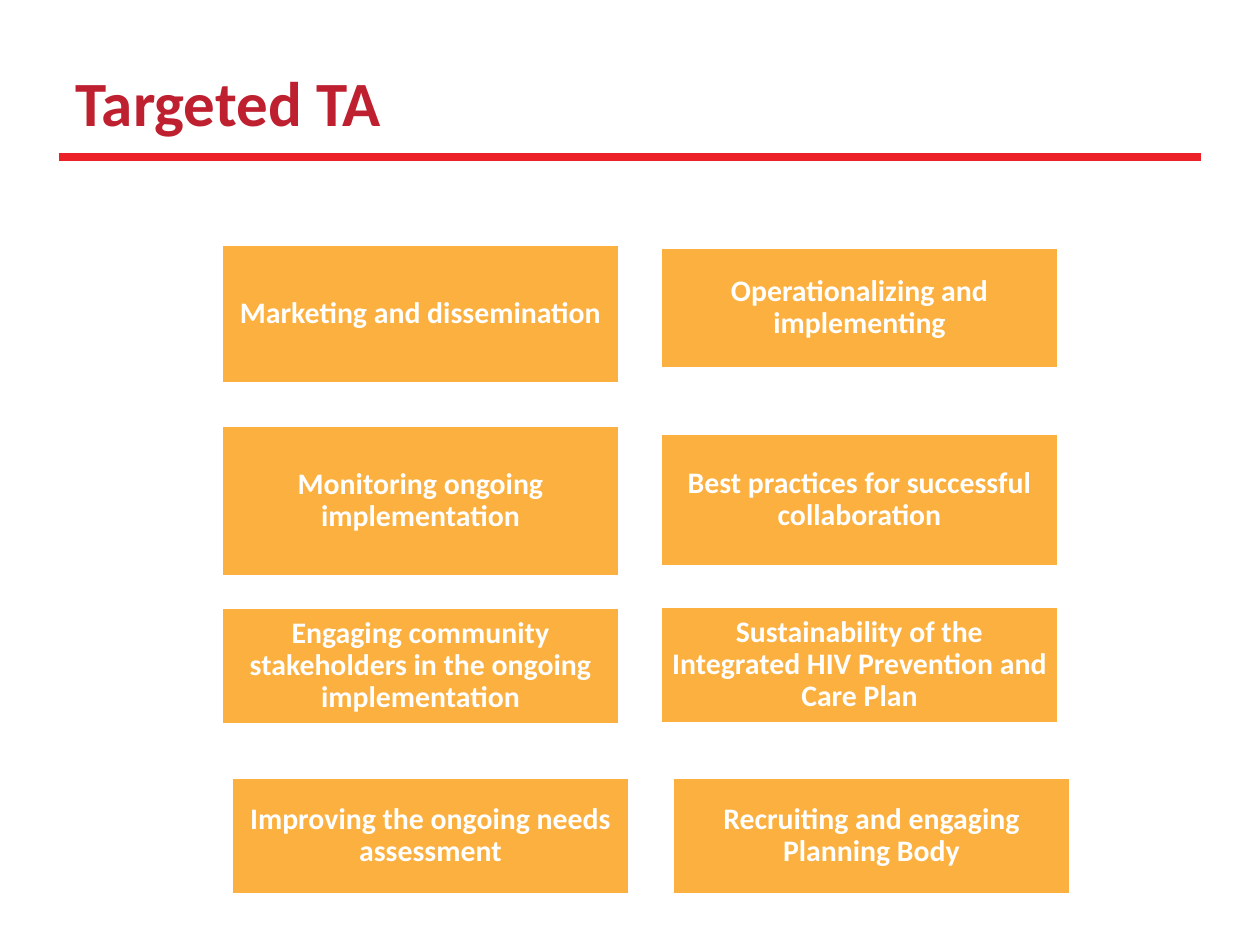
from dataclasses import dataclass

from lxml import etree
from pptx import Presentation, util as u
from pptx.dml.color import RGBColor
from pptx.enum import shapes, text
from pptx.oxml import ns

EMU_PER_PX = 914400 / 126
FONT = "Calibri"
WHITE = "FFFFFF"
AMBER = "FBB040"
CRIMSON = "BE202F"
RED = "EC2027"
TOPIC_WIDTH = 399
TOPIC_INSET = 9


@dataclass(frozen=True)
class Topic:
    label: str
    left: int
    top: int
    height: int


TOPICS = [
    Topic("Marketing and dissemination", 221, 244, 140),
    Topic("Operationalizing and implementing", 660, 247, 122),
    Topic("Monitoring ongoing implementation", 221, 425, 152),
    Topic("Best practices for successful collaboration", 660, 433, 134),
    Topic("Engaging community stakeholders in the ongoing implementation", 221, 607, 118),
    Topic("Sustainability of the Integrated HIV Prevention and Care Plan", 660, 606, 118),
    Topic("Improving the ongoing needs assessment", 231, 777, 118),
    Topic("Recruiting and engaging Planning Body", 672, 777, 118),
]


def px(length: int) -> u.Emu:
    return u.Emu(round(length * EMU_PER_PX))


def color(value: str) -> RGBColor:
    return RGBColor.from_string(value)


def add_run(paragraph, wording: str, size: int, ink: str) -> None:
    run = paragraph.add_run()
    run.text = wording
    run.font.name = FONT
    run.font.size = u.Pt(size)
    run.font.bold = True
    run.font.color.rgb = color(ink)


def write_heading(slide, wording: str) -> None:
    heading = slide.shapes.title
    heading.left, heading.top = px(63), px(38)
    heading.width, heading.height = px(1134), px(126)
    frame = heading.text_frame
    frame.auto_size = text.MSO_AUTO_SIZE.NONE
    frame.vertical_anchor = text.MSO_ANCHOR.MIDDLE
    paragraph = frame.paragraphs[0]
    paragraph.alignment = text.PP_ALIGN.LEFT
    add_run(paragraph, wording, 36, CRIMSON)


def draw_rule(slide) -> None:
    rule = slide.shapes.add_connector(
        shapes.MSO_CONNECTOR.STRAIGHT, px(59), px(157), px(1201), px(157)
    )
    rule.line.color.rgb = color(RED)
    rule.line.width = u.Pt(5)
    etree.SubElement(rule._element.spPr, ns.qn("a:effectLst"))


def draw_topic(slide, topic: Topic) -> None:
    box = slide.shapes.add_shape(
        shapes.MSO_SHAPE.RECTANGLE,
        px(topic.left), px(topic.top), px(TOPIC_WIDTH), px(topic.height),
    )
    box.shadow.inherit = False
    box.fill.solid()
    box.fill.fore_color.rgb = color(AMBER)
    box.line.color.rgb = color(WHITE)
    box.line.width = u.Pt(2)
    frame = box.text_frame
    frame.word_wrap = True
    frame.vertical_anchor = text.MSO_ANCHOR.MIDDLE
    frame.margin_left = frame.margin_right = px(TOPIC_INSET)
    frame.margin_top = frame.margin_bottom = px(TOPIC_INSET)
    paragraph = frame.paragraphs[0]
    paragraph.alignment = text.PP_ALIGN.CENTER
    paragraph.line_spacing = 0.9
    add_run(paragraph, topic.label, 17, WHITE)


def main() -> None:
    deck = Presentation()
    deck.slide_width, deck.slide_height = px(1260), px(945)
    slide = deck.slides.add_slide(deck.slide_layouts[5])
    draw_rule(slide)
    write_heading(slide, "Targeted TA")
    for topic in TOPICS:
        draw_topic(slide, topic)
    deck.save("out.pptx")


if __name__ == "__main__":
    main()
